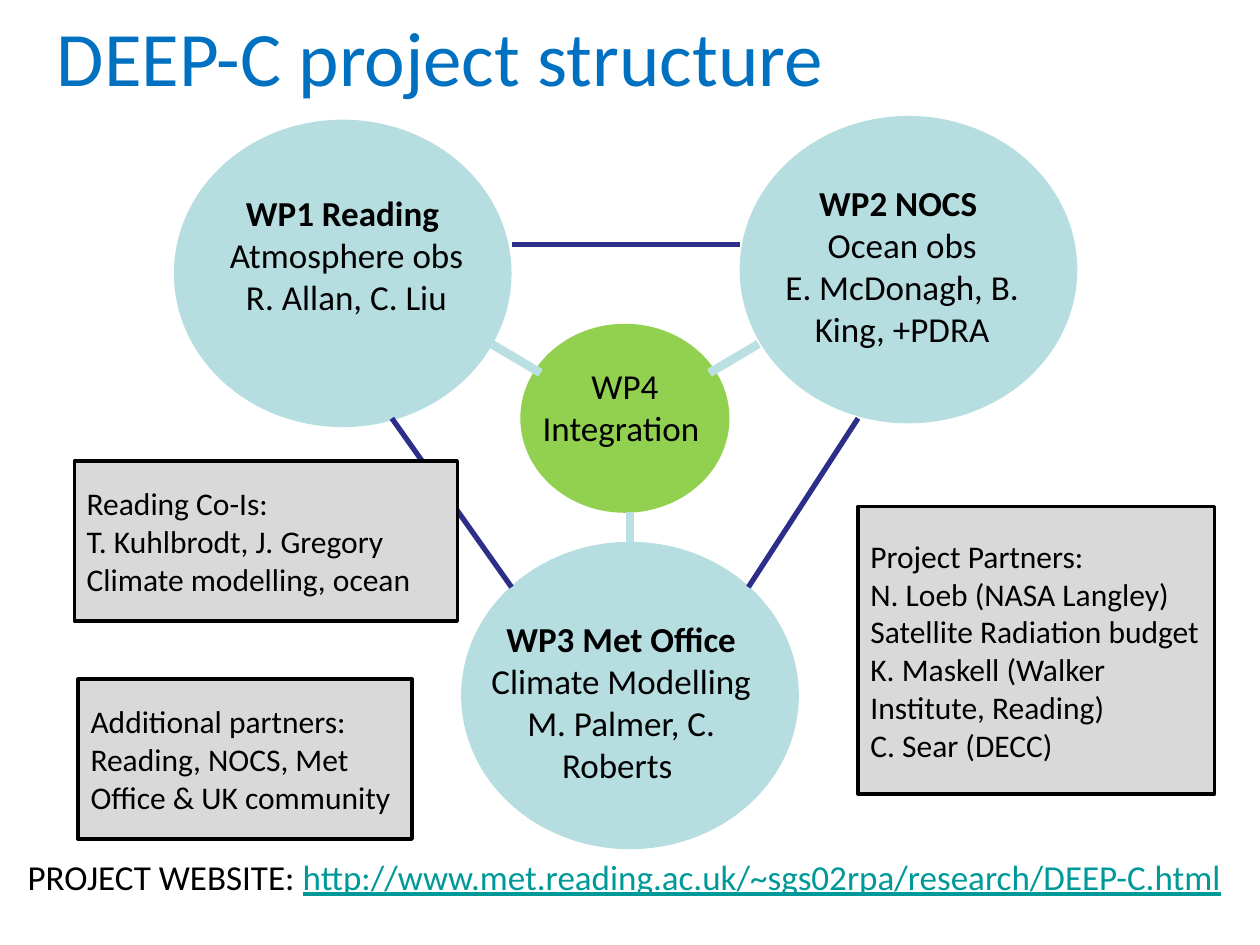
from pptx import Presentation
from pptx.dml.color import RGBColor
from pptx.enum.shapes import MSO_CONNECTOR, MSO_SHAPE
from pptx.enum.text import MSO_ANCHOR, PP_ALIGN
from pptx.oxml.ns import qn
from pptx.util import Inches, Pt
from lxml import etree

OVAL, RECT = MSO_SHAPE.OVAL, MSO_SHAPE.RECTANGLE
LINE = MSO_CONNECTOR.STRAIGHT
LEFT, MID = PP_ALIGN.LEFT, PP_ALIGN.CENTER
TOP, CENTRE = MSO_ANCHOR.TOP, MSO_ANCHOR.MIDDLE
HUES = {"title": "0070C0", "text": "000000", "link": "009999",
        "hub": "92D050", "pack": "9ED3D7", "spoke": "BBE0E3",
        "edge": "2D2D8A", "card": "D9D9D9"}

deck = Presentation()
deck.slide_width, deck.slide_height = Inches(10), Inches(7.5)
# Grid of 100 columns by 75 rows
col, row = deck.slide_width / 100, deck.slide_height / 75
slide = deck.slides.add_slide(deck.slide_layouts[5])
shapes = slide.shapes


def grid(x, y, w, h):
    return [round(n) for n in (x * col, y * row, w * col, h * row)]


def write(shape, lines, size=20, hue="text", align=LEFT, anchor=TOP, bold=False):
    """Fill a shape with lines; bold marks the first line only."""
    frame = shape.text_frame
    frame.word_wrap = True
    frame.vertical_anchor = anchor
    for i, text in enumerate(lines):
        para = frame.paragraphs[0] if i == 0 else frame.add_paragraph()
        para.alignment = align
        run = para.add_run()
        run.text = text
        run.font.name, run.font.size = "Calibri", Pt(size)
        run.font.bold = bold and i == 0
        run.font.color.rgb = RGBColor.from_string(HUES[hue])
    return run


# Title
title = shapes.title
title.left, title.top, title.width, title.height = grid(3.5, 1.3, 90, 6.3)
write(title, ["DEEP-C project structure"], size=44, hue="title", anchor=CENTRE)

# Hub and work package circles
for x, y, w, h, hue in [(41.3, 25.7, 16.6, 15, "hub"),
                        (13.8, 9.5, 26.8, 24.4, "pack"),
                        (58.7, 9.2, 26.8, 24.4, "pack"),
                        (36.6, 43, 26.8, 24.4, "pack")]:
    disc = shapes.add_shape(OVAL, *grid(x, y, w, h))
    disc.shadow.inherit = False
    disc.fill.solid()
    disc.fill.fore_color.rgb = RGBColor.from_string(HUES[hue])
    disc.line.fill.background()
    if hue == "pack":
        tint = disc.fill._xPr.find(".//" + qn("a:srgbClr"))
        etree.SubElement(tint, qn("a:alpha"), val="75000")

# Circle labels
for x, y, h, bold, lines in [
        (16.1, 14.7, 11.1, True,
         ["WP1 Reading ", "Atmosphere obs", "R. Allan, C. Liu"]),
        (60.2, 13.9, 14.5, True,
         ["WP2 NOCS ", "Ocean obs", "E. McDonagh, B. King, +PDRA"]),
        (37.9, 48.5, 14.5, True,
         ["WP3 Met Office", "Climate Modelling ", "M. Palmer, C. Roberts "]),
        (38.2, 28.4, 7.7, False, ["WP4", "Integration "])]:
    label = shapes.add_textbox(*grid(x, y, 22.8, h))
    write(label, lines, align=MID, bold=bold)

# Spokes to the hub, then edges between the packages
for hue, width, ends in [
        ("spoke", 5, [(42.9, 29.6, 39, 27.3), (56.3, 29.6, 60.2, 27.3),
                      (50, 43, 50, 40.6)]),
        ("edge", 3, [(40.6, 46.6, 31.1, 33.2), (59.4, 46.6, 68.1, 33.2),
                     (58.7, 19.4, 40.6, 19.4)])]:
    for end in ends:
        link = shapes.add_connector(LINE, *grid(*end))
        link.line.color.rgb = RGBColor.from_string(HUES[hue])
        link.line.width = Pt(width)
        etree.SubElement(link._element.spPr, qn("a:effectLst"))

# Partner cards
for x, y, w, h, lines in [
        (5.9, 36.6, 30.4, 12.7,
         ["Reading Co-Is:", "T. Kuhlbrodt, J. Gregory", "Climate modelling, ocean"]),
        (68.1, 40.2, 28.3, 22.8,
         ["Project Partners:", "N. Loeb (NASA Langley) Satellite Radiation budget",
          "K. Maskell (Walker Institute, Reading)", "C. Sear (DECC)"]),
        (6.2, 53.9, 26.5, 12.7,
         ["Additional partners:", "Reading, NOCS, Met Office & UK community"])]:
    card = shapes.add_shape(RECT, *grid(x, y, w, h))
    card.shadow.inherit = False
    card.fill.solid()
    card.fill.fore_color.rgb = RGBColor.from_string(HUES["card"])
    card.line.color.rgb = RGBColor.from_string(HUES["text"])
    card.line.width = Pt(2)
    write(card, lines, size=18, anchor=CENTRE)

# Website line
site = shapes.add_textbox(*grid(1.2, 67.4, 96.9, 4.4))
write(site, ["PROJECT WEBSITE: "])
web = site.text_frame.paragraphs[0].add_run()
web.text = "http://www.met.reading.ac.uk/~sgs02rpa/research/DEEP-C.html"
web.font.name, web.font.size, web.font.underline = "Calibri", Pt(20), True
web.font.color.rgb = RGBColor.from_string(HUES["link"])

deck.save("out.pptx")
